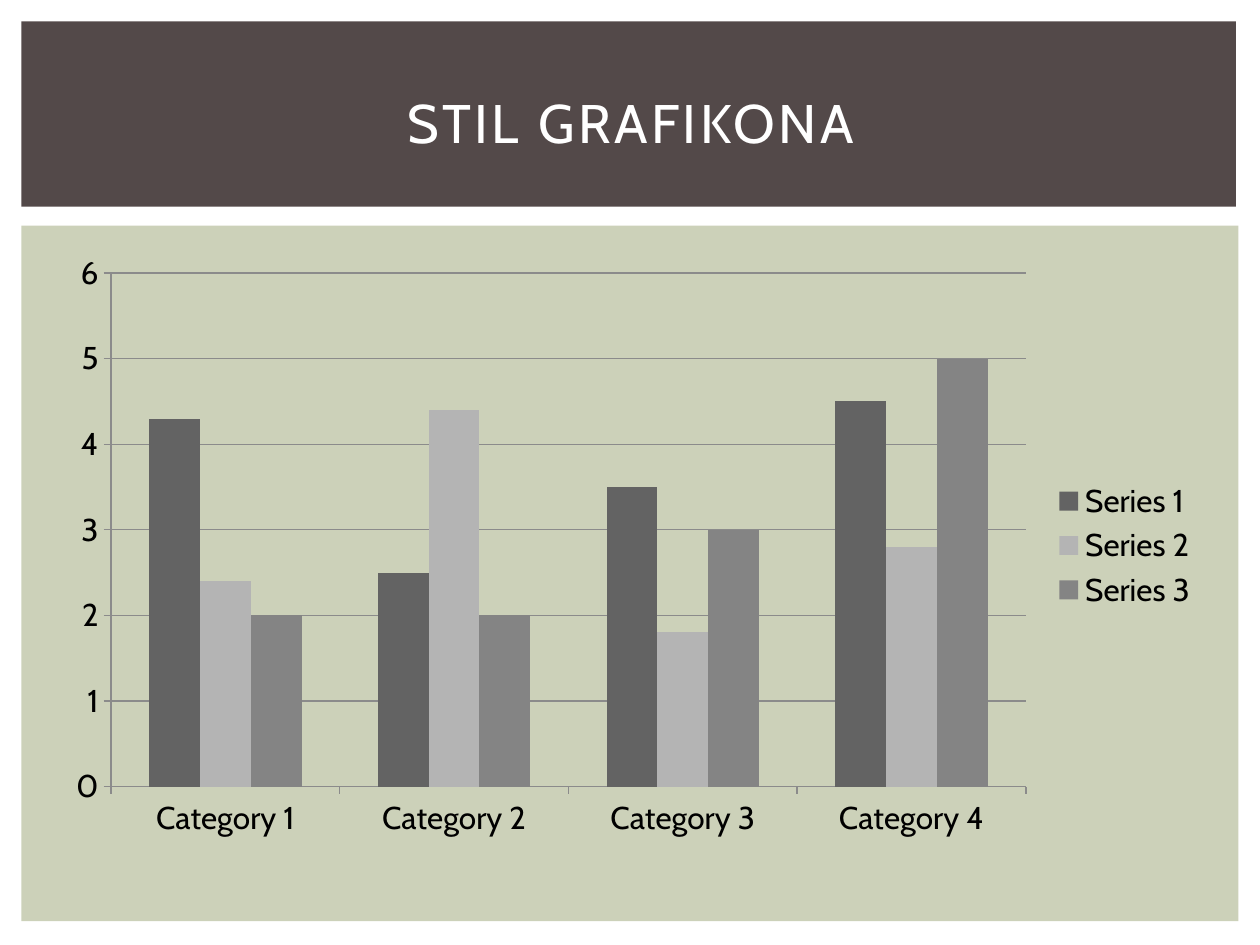
from pptx import Presentation
from pptx.chart.data import CategoryChartData
from pptx.dml.color import RGBColor
from pptx.enum.chart import XL_CHART_TYPE, XL_LEGEND_POSITION, XL_TICK_MARK
from pptx.enum.shapes import MSO_SHAPE
from pptx.enum.text import MSO_ANCHOR, PP_ALIGN
from pptx.util import Inches, Pt

SAGE = RGBColor(0xCC, 0xD1, 0xB9)
BROWN = RGBColor(0x53, 0x49, 0x49)
WHITE = RGBColor(0xFF, 0xFF, 0xFF)
BLACK = RGBColor(0, 0, 0)
GRID = RGBColor(0x8B, 0x8B, 0x8B)
DARK = RGBColor(0x63, 0x63, 0x63)
LIGHT = RGBColor(0xB4, 0xB4, 0xB4)
MID = RGBColor(0x84, 0x84, 0x84)


def style(font, **values):
    for name, value in values.items():
        if name == "color":
            font.color.rgb = value
        else:
            setattr(font, name, value)


deck = Presentation()
deck.slide_width, deck.slide_height = Inches(10), Inches(7.5)
slide = deck.slides.add_slide(deck.slide_layouts[6])

# Body panel and title band
panels = [(1.79, 9.66, 5.52, SAGE), (0.17, 9.64, 1.47, BROWN)]
for top, width, height, color in panels:
    panel = slide.shapes.add_shape(
        MSO_SHAPE.RECTANGLE, Inches(0.17), Inches(top), Inches(width), Inches(height))
    panel.shadow.inherit = False
    panel.fill.solid()
    panel.fill.fore_color.rgb = color
    panel.line.fill.background()

# Column chart
data = CategoryChartData()
data.categories = [f"Category {n}" for n in range(1, 5)]
rows = [
    ((4.3, 2.5, 3.5, 4.5), DARK),
    ((2.4, 4.4, 1.8, 2.8), LIGHT),
    ((2, 2, 3, 5), MID),
]
for n, (values, color) in enumerate(rows, 1):
    data.add_series(f"Series {n}", values)
chart = slide.shapes.add_chart(
    XL_CHART_TYPE.COLUMN_CLUSTERED,
    Inches(0.42), Inches(1.92), Inches(9.19), Inches(4.82), data).chart
chart.has_title = False
style(chart.font, name="Cabin", size=Pt(18), color=BLACK)

plot = chart.plots[0]
plot.vary_by_categories = False
plot.gap_width = 150
plot.overlap = 0
for series, (values, color) in zip(plot.series, rows):
    series.format.fill.solid()
    series.format.fill.fore_color.rgb = color

# Axes, gridlines and legend
scale = chart.value_axis
scale.minimum_scale, scale.maximum_scale, scale.major_unit = 0, 6, 1
scale.has_major_gridlines = True
for axis in (chart.category_axis, scale):
    axis.major_tick_mark = XL_TICK_MARK.OUTSIDE
    axis.minor_tick_mark = XL_TICK_MARK.NONE
for part in (chart.category_axis, scale, scale.major_gridlines):
    part.format.line.color.rgb = GRID
    part.format.line.width = Pt(0.75)
chart.has_legend = True
chart.legend.position = XL_LEGEND_POSITION.RIGHT
chart.legend.include_in_layout = False

# Title
box = slide.shapes.add_textbox(Inches(0.42), Inches(0.39), Inches(9.17), Inches(1.15))
frame = box.text_frame
frame.word_wrap = True
frame.vertical_anchor = MSO_ANCHOR.MIDDLE
para = frame.paragraphs[0]
para.alignment = PP_ALIGN.CENTER
run = para.add_run()
run.text = "STIL GRAFIKONA"
style(run.font, name="Cabin", size=Pt(31), color=WHITE)
run._r.get_or_add_rPr().set("spc", "200")

deck.save("out.pptx")
